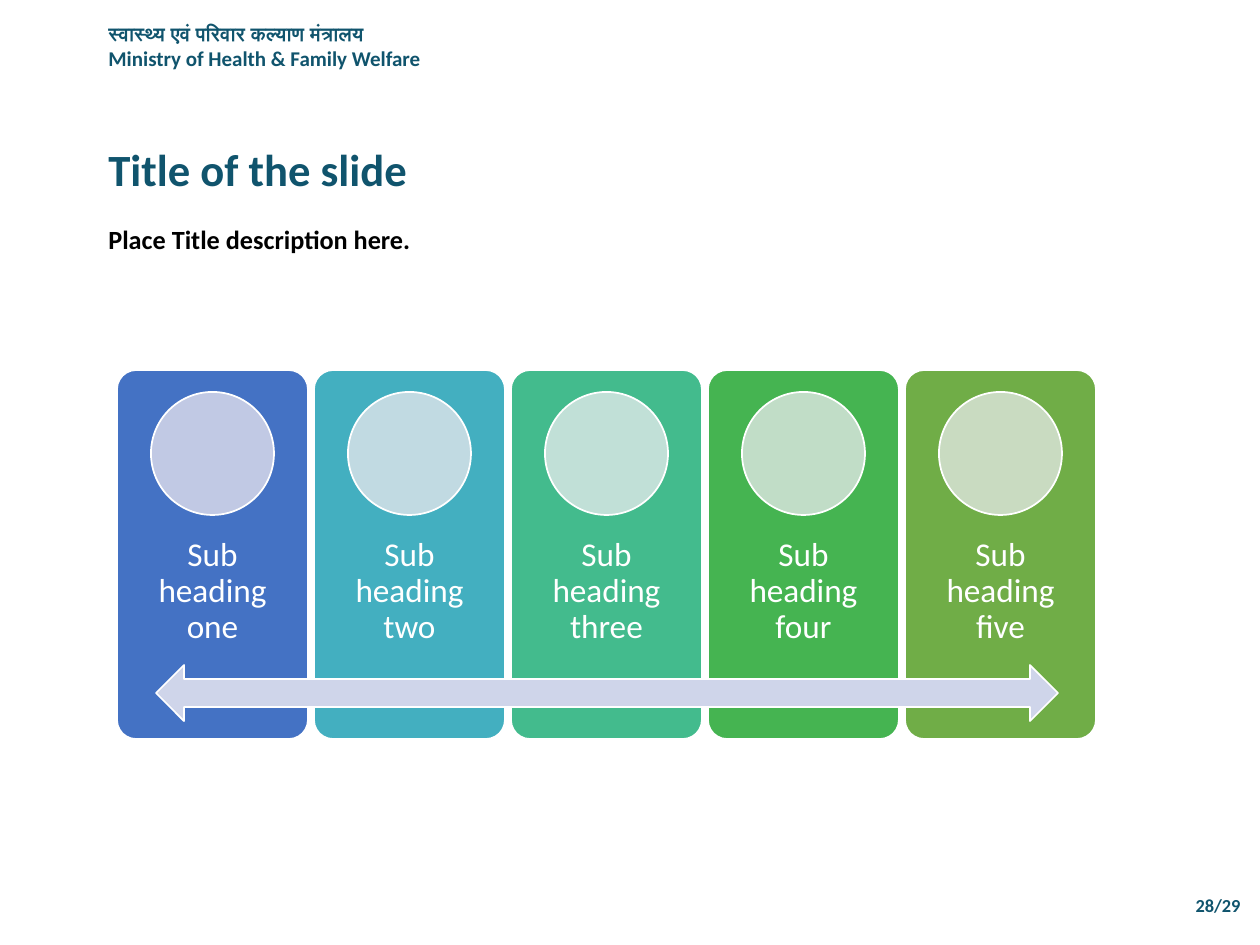
from pptx import Presentation
from pptx.dml.color import RGBColor
from pptx.enum.shapes import MSO_SHAPE
from pptx.enum.text import MSO_ANCHOR, PP_ALIGN
from pptx.util import Pt

PX = 914400 / 126
TEAL = "10546D"


def add_text(x, y, w, h, lines, color, bold=True, align=PP_ALIGN.LEFT, spacing=None):
    """Add a text box; lines holds one (text, size) pair per paragraph."""
    box = s.shapes.add_textbox(*[int(v * PX) for v in (x, y, w, h)])
    tf = box.text_frame
    tf.word_wrap = True
    tf.text = "\n".join(text for text, _ in lines)
    for p, (_, size) in zip(tf.paragraphs, lines):
        p.alignment = align
        p.line_spacing = spacing
        font = p.runs[0].font
        font.name, font.size, font.bold = "Calibri", Pt(size), bold
        font.color.rgb = RGBColor.from_string(color)
    return tf


def add_shape(kind, x, y, w, h, fill):
    sp = s.shapes.add_shape(kind, *[int(v * PX) for v in (x, y, w, h)])
    sp.shadow.inherit = False
    sp.fill.solid()
    sp.fill.fore_color.rgb = RGBColor.from_string(fill)
    sp.line.color.rgb = RGBColor.from_string("FFFFFF")
    sp.line.width = Pt(1)
    return sp


prs = Presentation()
prs.slide_width, prs.slide_height = int(1260 * PX), int(945 * PX)
s = prs.slides.add_slide(prs.slide_layouts[6])

# Header, title and page number
add_text(1176, 888, 84, 35, [("28/29", 10.5)], TEAL, align=PP_ALIGN.CENTER)
add_text(96, 16, 432, 62, [("स्वास्थ्य एवं परिवार कल्याण मंत्रालय", 11.2),
                           ("Ministry of Health & Family Welfare", 12)], TEAL)
add_text(96, 146, 580, 59, [("Title of the slide", 25.5)], TEAL, spacing=0.8)
add_text(96, 227, 679, 47, [("Place Title description here.", 15)], "000000",
         spacing=Pt(12.4))

# Five cards, each with a circle and a heading
cards = [
    ("Sub heading one", "4472C4", "C1C9E4"),
    ("Sub heading two", "43AFC0", "C1DAE2"),
    ("Sub heading three", "43BB8D", "C1E0D7"),
    ("Sub heading four", "45B451", "C1DDC7"),
    ("Sub heading five", "70AD47", "C9DBC1"),
]
CARD_W, CIRCLE, PITCH = 191, 123, 197
for i, (heading, card_fill, circle_fill) in enumerate(cards):
    x = 117 + i * PITCH
    card = add_shape(MSO_SHAPE.ROUNDED_RECTANGLE, x, 370, CARD_W, 369, card_fill)
    card.adjustments[0] = 0.1
    tf = add_text(x, 518, CARD_W, 147, [(heading, 19)], "FFFFFF", bold=False,
                  align=PP_ALIGN.CENTER, spacing=0.9)
    tf.vertical_anchor = MSO_ANCHOR.MIDDLE
    tf.margin_left = tf.margin_right = tf.margin_top = tf.margin_bottom = int(19 * PX)
    add_shape(MSO_SHAPE.OVAL, x + (CARD_W - CIRCLE) // 2, 392, CIRCLE, CIRCLE, circle_fill)

# Arrow across all cards
add_shape(MSO_SHAPE.LEFT_RIGHT_ARROW, 156, 665, 902, 56, "CFD5EA")

prs.save("out.pptx")
